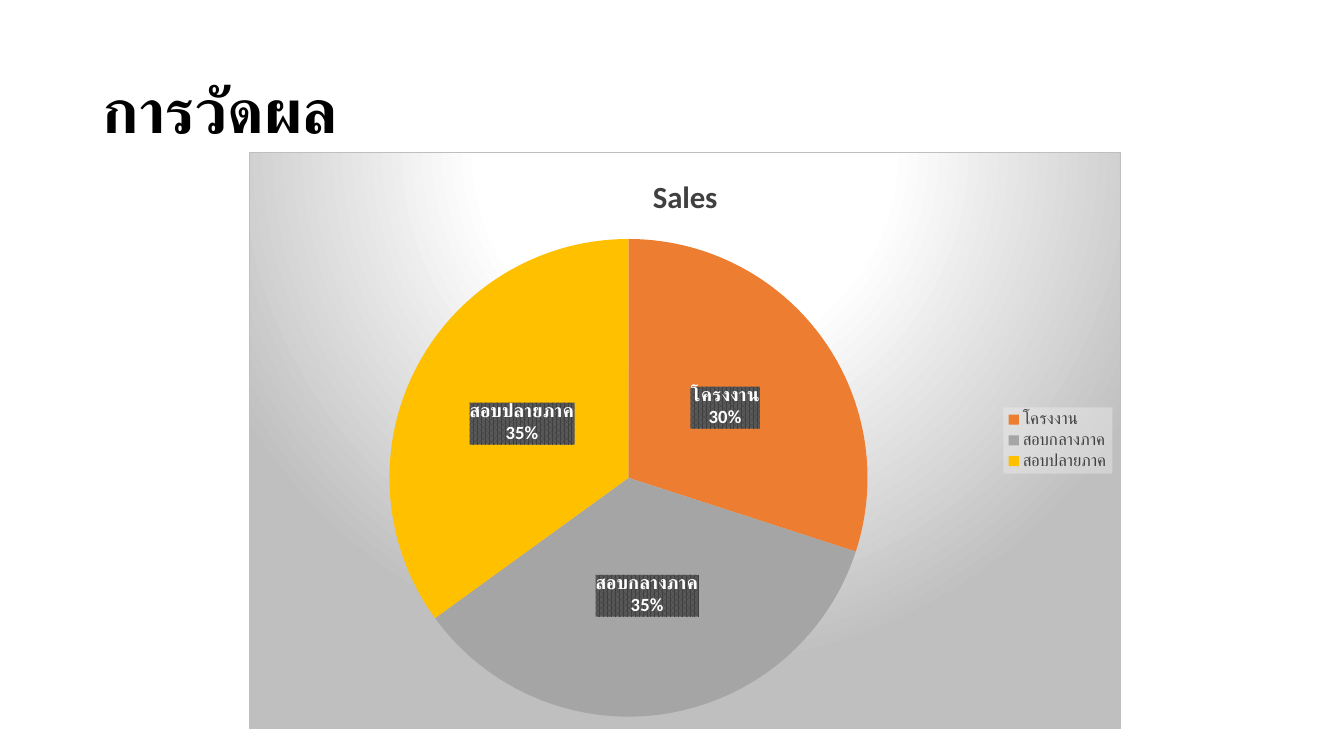
"""Build the course assessment slide: a title over a pie chart of score shares."""
from dataclasses import dataclass

from lxml import etree
from pptx import Presentation
from pptx import util as u
from pptx.chart import data
from pptx.dml import color
from pptx.enum import chart as charts, text
from pptx.oxml import ns, parse_xml


@dataclass
class Theme:
    heading: str = "Arial"
    body: str = "Calibri"
    heading_size: float = 44
    chart_title_size: float = 22
    label_size: float = 13.3
    legend_size: float = 12
    chart_size: float = 10
    black: str = "000000"
    dark: str = "404040"
    hatch: str = "595959"
    white: str = "FFFFFF"
    edge: str = "BFBFBF"
    legend_fill: str = "F2F2F2"
    slices: tuple = ("5B9BD5", "ED7D31", "A5A5A5", "FFC000")


theme = Theme()
NAMESPACES = ns.nsdecls("c", "a")


def style(font, face, size, shade, bold=False):
    font.name, font.size, font.bold = face, u.Pt(size), bold
    font.color.rgb = color.RGBColor.from_string(shade)


def chart_xml(tag, body):
    return parse_xml(f"<c:{tag} {NAMESPACES}>{body}</c:{tag}>")


deck = Presentation()
deck.slide_width, deck.slide_height = u.Inches(13.33), u.Inches(7.5)
slide = deck.slides.add_slide(deck.slide_layouts[5])
column, row = deck.slide_width / 100, deck.slide_height / 100

heading = slide.shapes.title
heading.left, heading.top = int(6.9 * column), int(5.33 * row)
heading.width, heading.height = int(86.27 * column), int(19.33 * row)
heading.text_frame.vertical_anchor = text.MSO_ANCHOR.MIDDLE
heading.text_frame.auto_size = text.MSO_AUTO_SIZE.NONE
heading_line = heading.text_frame.paragraphs[0]
heading_line.alignment = text.PP_ALIGN.LEFT
heading_line.line_spacing = 0.9
heading_run = heading_line.add_run()
heading_run.text = "การวัดผล"
style(heading_run.font, theme.heading, theme.heading_size, theme.black, True)

scores = data.CategoryChartData()
scores.categories = ["", "โครงงาน", "สอบกลางภาค", "สอบปลายภาค"]
scores.add_series("Sales", (None, 30, 35, 35))
pie = slide.shapes.add_chart(
    charts.XL_CHART_TYPE.PIE,
    int(18.53 * column), int(20.13 * row), int(64.89 * column), int(76.27 * row),
    scores,
).chart
style(pie.font, theme.body, theme.chart_size, theme.black)

pie.has_title = True
pie.chart_title.include_in_layout = False
sales_run = pie.chart_title.text_frame.paragraphs[0].add_run()
sales_run.text = "Sales"
style(sales_run.font, theme.body, theme.chart_title_size, theme.dark, True)

pie.has_legend = True
legend = pie.legend
legend.position = charts.XL_LEGEND_POSITION.RIGHT
legend.include_in_layout = False
style(legend.font, theme.body, theme.legend_size, theme.dark)
legend_xml = legend._element
legend_xml.find(ns.qn("c:legendPos")).addnext(
    chart_xml("legendEntry", '<c:idx val="0"/><c:delete val="1"/>'))
legend_xml.find(ns.qn("c:overlay")).addnext(chart_xml("spPr", (
    f'<a:solidFill><a:srgbClr val="{theme.legend_fill}"><a:alpha val="39000"/>'
    '</a:srgbClr></a:solidFill><a:ln><a:noFill/></a:ln>')))

plot = pie.plots[0]
plot.vary_by_categories = True
sales = plot.series[0]
for position, shade in enumerate(theme.slices):
    fill = sales.points[position].format.fill
    fill.solid()
    fill.fore_color.rgb = color.RGBColor.from_string(shade)

labels = sales.data_labels
labels.show_value = False
labels.show_category_name = True
labels.show_percentage = True
labels.number_format = "0%"
labels.number_format_is_linked = False
labels.position = charts.XL_LABEL_POSITION.CENTER
style(labels.font, theme.body, theme.label_size, theme.white, True)
labels_xml = labels._element
labels_xml.find(ns.qn("c:numFmt")).addnext(chart_xml("spPr", (
    f'<a:pattFill prst="pct75"><a:fgClr><a:srgbClr val="{theme.dark}"/></a:fgClr>'
    f'<a:bgClr><a:srgbClr val="{theme.hatch}"/></a:bgClr></a:pattFill>'
    '<a:ln><a:noFill/></a:ln>')))
separator = etree.Element(ns.qn("c:separator"))
separator.text = "\n"
labels_xml.find(ns.qn("c:showBubbleSize")).addnext(separator)
labels_xml.insert(0, chart_xml("dLbl", '<c:idx val="0"/><c:delete val="1"/>'))

plot_area = pie._chartSpace.chart.plotArea
for automatic in plot_area.findall(ns.qn("c:layout")):
    plot_area.remove(automatic)
pie_frame = {"x": 0.16, "y": 0.15, "w": 0.55, "h": 0.83}
plot_area.insert(0, chart_xml("layout", (
    '<c:manualLayout><c:layoutTarget val="inner"/>'
    '<c:xMode val="edge"/><c:yMode val="edge"/>'
    + "".join(f'<c:{side} val="{share}"/>' for side, share in pie_frame.items())
    + "</c:manualLayout>")))

stops = ((0, theme.white), (39, theme.white), (100, theme.edge))
pie._chartSpace.chart.addnext(chart_xml("spPr", (
    "<a:gradFill><a:gsLst>"
    + "".join(f'<a:gs pos="{share * 1000}"><a:srgbClr val="{shade}"/></a:gs>'
              for share, shade in stops)
    + '</a:gsLst><a:path path="circle">'
    '<a:fillToRect l="50000" t="-80000" r="50000" b="180000"/></a:path></a:gradFill>'
    f'<a:ln w="{u.Pt(0.75)}"><a:solidFill><a:srgbClr val="{theme.edge}"/>'
    "</a:solidFill></a:ln>")))

deck.save("out.pptx")
